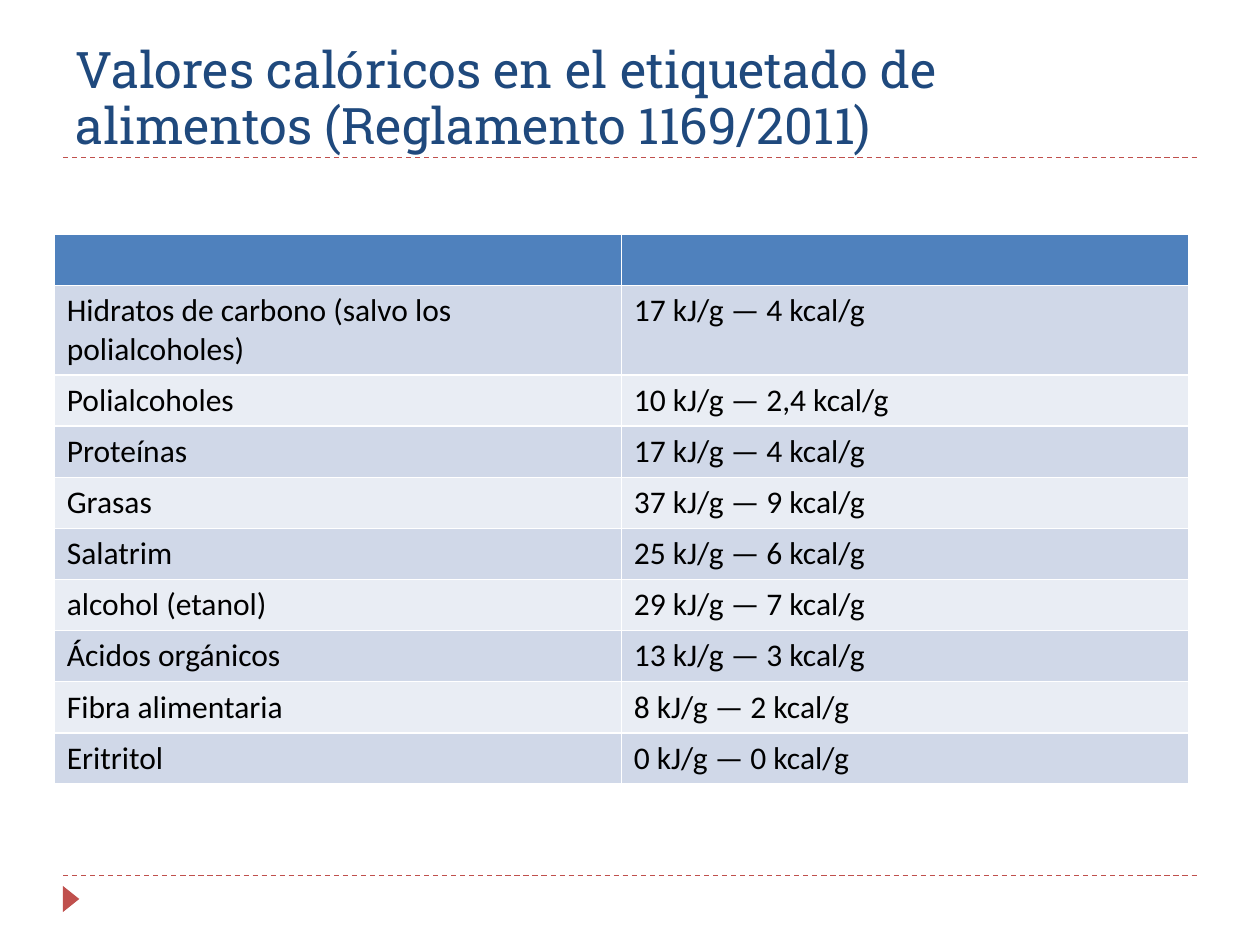
from lxml.etree import SubElement
from pptx import Presentation
from pptx.dml.color import RGBColor
from pptx.enum.dml import MSO_LINE_DASH_STYLE as Dash
from pptx.enum.shapes import MSO_CONNECTOR as Connector, MSO_SHAPE as Shape
from pptx.enum.text import MSO_ANCHOR as Anchor, MSO_AUTO_SIZE as AutoSize, PP_ALIGN as Align
from pptx.oxml.ns import qn
from pptx.util import Pt

TITLE = "Valores calóricos en el etiquetado de alimentos (Reglamento 1169/2011)"
ROWS = [
    ("", ""),
    ("Hidratos de carbono (salvo los polialcoholes)", "17 kJ/g — 4 kcal/g"),
    ("Polialcoholes", "10 kJ/g — 2,4 kcal/g"),
    ("Proteínas", "17 kJ/g — 4 kcal/g"),
    ("Grasas", "37 kJ/g — 9 kcal/g"),
    ("Salatrim", "25 kJ/g — 6 kcal/g"),
    ("alcohol (etanol)", "29 kJ/g — 7 kcal/g"),
    ("Ácidos orgánicos", "13 kJ/g — 3 kcal/g"),
    ("Fibra alimentaria", "8 kJ/g — 2 kcal/g"),
    ("Eritritol", "0 kJ/g — 0 kcal/g"),
]
COLORS = {"title": "1F497D", "accent": "C0504D", "header": "4F81BD",
          "odd": "D0D8E8", "even": "E9EDF4", "text": "000000"}
LEFT, WIDTH = 36, 648
RULE_TOPS = (90, 500.4)
TABLE_LEFT, TABLE_TOP, ROW_HEIGHT = 31, 134, 29.2


def color(name):
    return RGBColor.from_string(COLORS[name])


def format_font(paragraph, name, size, color_name):
    for run in paragraph.runs:
        run.font.name = name
        run.font.size = Pt(size)
        run.font.color.rgb = color(color_name)


def add_rule(slide, top):
    rule = slide.shapes.add_connector(
        Connector.STRAIGHT, Pt(LEFT), Pt(top), Pt(LEFT + WIDTH), Pt(top))
    rule.line.color.rgb = color("accent")
    rule.line.width = Pt(0.75)
    rule.line.dash_style = Dash.DASH
    SubElement(rule._element.spPr, qn("a:effectLst"))


def add_marker(slide):
    marker = slide.shapes.add_shape(
        Shape.ISOSCELES_TRIANGLE, Pt(33.1), Pt(509), Pt(15), Pt(9.4))
    marker.rotation = 90
    marker.shadow.inherit = False
    marker.fill.solid()
    marker.fill.fore_color.rgb = color("accent")
    marker.line.fill.background()


def set_title(slide):
    title = slide.shapes.title
    title.left, title.top = Pt(LEFT), Pt(12.2)
    title.width, title.height = Pt(WIDTH), Pt(77.8)
    frame = title.text_frame
    frame.text = TITLE
    frame.word_wrap = True
    frame.auto_size = AutoSize.NONE
    frame.vertical_anchor = Anchor.BOTTOM
    frame.margin_bottom = Pt(1)
    paragraph = frame.paragraphs[0]
    paragraph.alignment = Align.LEFT
    paragraph.line_spacing = 0.93
    format_font(paragraph, "Roboto Slab", 28.8, "title")


def add_values_table(slide):
    table = slide.shapes.add_table(
        len(ROWS), 2, Pt(TABLE_LEFT), Pt(TABLE_TOP),
        Pt(WIDTH), Pt(ROW_HEIGHT * len(ROWS))).table
    for index, texts in enumerate(ROWS):
        fill = "header" if index == 0 else "odd" if index % 2 else "even"
        table.rows[index].height = Pt(ROW_HEIGHT)
        for column, text in enumerate(texts):
            cell = table.cell(index, column)
            cell.fill.solid()
            cell.fill.fore_color.rgb = color(fill)
            if text:
                cell.text_frame.text = text
                format_font(cell.text_frame.paragraphs[0], "Calibri", 18, "text")


def main():
    presentation = Presentation()
    presentation.slide_width, presentation.slide_height = Pt(720), Pt(540)
    slide = presentation.slides.add_slide(presentation.slide_layouts[5])
    for top in RULE_TOPS:
        add_rule(slide, top)
    add_marker(slide)
    set_title(slide)
    add_values_table(slide)
    presentation.save("out.pptx")


if __name__ == "__main__":
    main()
